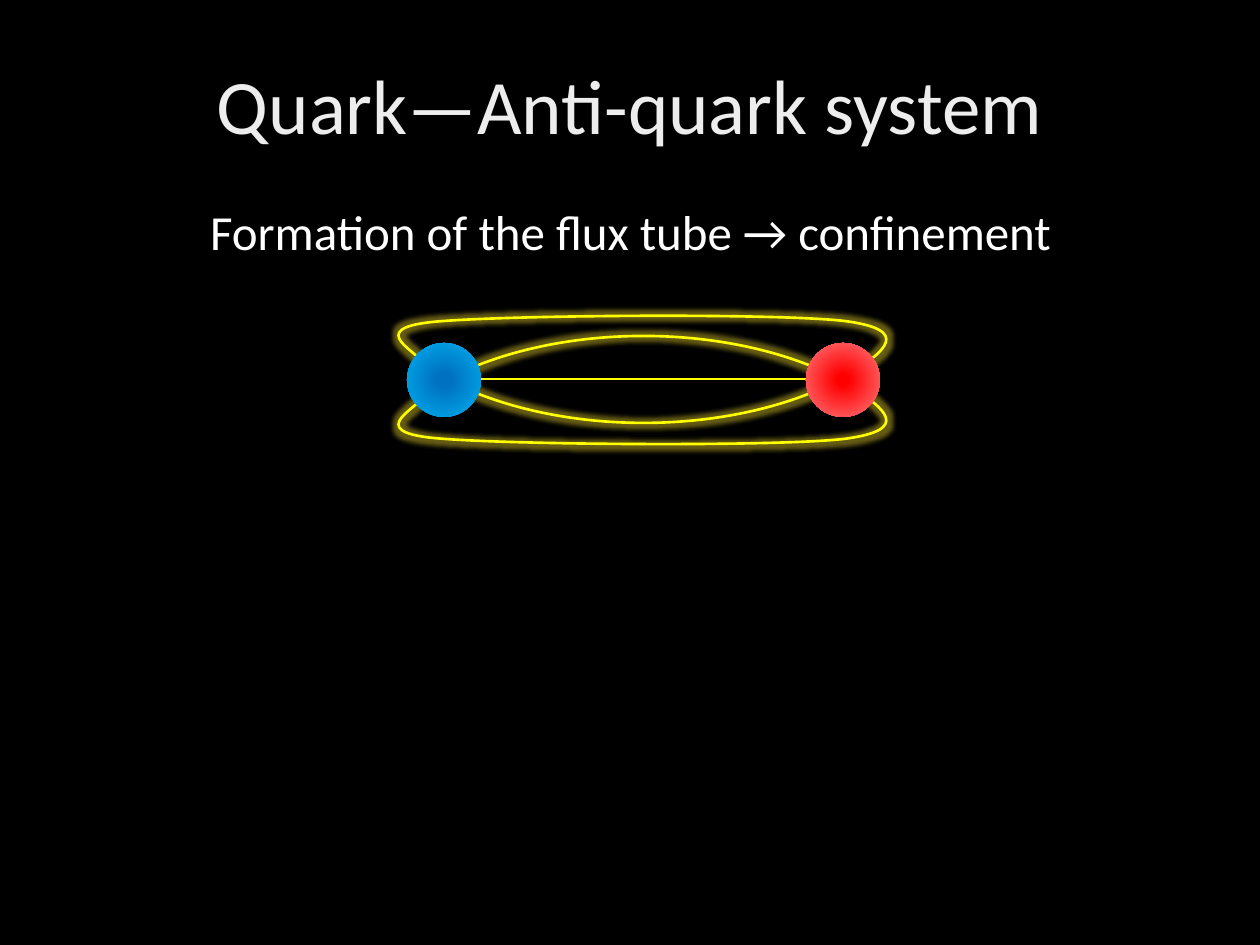
import pptx
import pptx.dml.color
import pptx.enum.shapes
import pptx.enum.text
import pptx.oxml
import pptx.oxml.ns
import pptx.util
from lxml import etree

EMU_PER_PX = 914400 / 126
COLORS = {
    "background": "000000", "text": "FFFFFF", "silver": "BFBFBF", "pearl": "EDEDED",
    "flux": "FFFF00", "glow": "FFE632",
    "red": "FF0000", "pink": "FF7C80", "blue": "0070C0", "sky": "00B0F0",
}
CENTER_SHADE = '<a:path path="circle"><a:fillToRect l="50000" t="50000" r="50000" b="50000"/></a:path>'
TITLE_SHADE = '<a:lin ang="4800000" scaled="0"/>'


def px(value):
    return pptx.util.Emu(round(value * EMU_PER_PX))


def rgb(name):
    return pptx.dml.color.RGBColor.from_string(COLORS[name])


def xml(tag, content, attributes=""):
    namespace = pptx.oxml.ns.nsdecls("a")
    return pptx.oxml.parse_xml(f"<a:{tag} {namespace} {attributes}>{content}</a:{tag}>")


class SlideBuilder:
    font = "Calibri"
    line_width = 1.5
    glow_radius = 63500

    def __init__(self, slide):
        self.slide = slide
        slide.background.fill.solid()
        slide.background.fill.fore_color.rgb = rgb("background")

    def text(self, box, content, size, wrap):
        frame = self.slide.shapes.add_textbox(*map(px, box)).text_frame
        frame.word_wrap = wrap
        frame.vertical_anchor = pptx.enum.text.MSO_ANCHOR.MIDDLE
        if not wrap:
            frame.auto_size = pptx.enum.text.MSO_AUTO_SIZE.SHAPE_TO_FIT_TEXT
        frame.text = content
        paragraph = frame.paragraphs[0]
        paragraph.alignment = pptx.enum.text.PP_ALIGN.CENTER
        run = paragraph.runs[0]
        run.font.name = self.font
        run.font.size = pptx.util.Pt(size)
        run.font.color.rgb = rgb("text")
        return paragraph

    def gradient(self, fill, owner, stops, shade):
        fill.gradient()
        listing = "".join(
            f'<a:gs pos="{position * 1000}"><a:srgbClr val="{COLORS[name]}"/></a:gs>'
            for position, name in stops)
        current = owner.find(pptx.oxml.ns.qn("a:gradFill"))
        owner.replace(current, xml("gradFill", f"<a:gsLst>{listing}</a:gsLst>{shade}"))

    def flux_style(self, shape):
        shape.line.color.rgb = rgb("flux")
        shape.line.width = pptx.util.Pt(self.line_width)

    def glow(self, shape):
        shape.shadow.inherit = False
        shape.fill.background()
        self.flux_style(shape)
        effects = shape._element.spPr.find(pptx.oxml.ns.qn("a:effectLst"))
        halo = etree.SubElement(effects, pptx.oxml.ns.qn("a:glow"), rad=str(self.glow_radius))
        color = etree.SubElement(halo, pptx.oxml.ns.qn("a:srgbClr"), val=COLORS["glow"])
        etree.SubElement(color, pptx.oxml.ns.qn("a:alpha"), val="40000")

    def straight(self, start, end):
        line = self.slide.shapes.add_connector(
            pptx.enum.shapes.MSO_CONNECTOR.STRAIGHT, *map(px, start + end))
        self.flux_style(line)
        line._element.spPr.append(xml("effectLst", ""))

    def arc(self, box, flipped):
        arc = self.slide.shapes.add_shape(pptx.enum.shapes.MSO_SHAPE.ARC, *map(px, box))
        arc.adjustments[0] = 126.955
        arc.adjustments[1] = 196.399
        if flipped:
            arc._element.spPr.xfrm.set("flipV", "1")
        self.glow(arc)

    def curve(self, box, points):
        left, top, width, height = box
        builder = self.slide.shapes.build_freeform(px(left), px(top))
        builder.add_line_segments([(px(left + width), px(top + height))], close=False)
        curve = builder.convert_to_shape()
        nodes = [f'<a:pt x="{px(x - left)}" y="{px(y - top)}"/>' for x, y in points]
        content = f"<a:moveTo>{nodes[0]}</a:moveTo>" + "".join(
            f"<a:cubicBezTo>{''.join(nodes[i:i + 3])}</a:cubicBezTo>"
            for i in range(1, len(nodes), 3))
        outlines = curve._element.spPr.find(".//" + pptx.oxml.ns.qn("a:pathLst"))
        outlines.replace(outlines[0], xml("path", content, f'w="{px(width)}" h="{px(height)}"'))
        self.glow(curve)

    def ball(self, box, inner, outer):
        ball = self.slide.shapes.add_shape(pptx.enum.shapes.MSO_SHAPE.OVAL, *map(px, box))
        ball.shadow.inherit = False
        ball.line.fill.background()
        self.gradient(ball.fill, ball._element.spPr, [(11, inner), (100, outer)], CENTER_SHADE)


def main():
    deck = pptx.Presentation()
    deck.slide_width, deck.slide_height = px(1260), px(945)
    builder = SlideBuilder(deck.slides.add_slide(deck.slide_layouts[6]))

    title = builder.text((87, 19, 1086, 182), "Quark—Anti-quark system", 44, True)
    title.line_spacing = 0.9
    title_run = title.runs[0]
    builder.gradient(title_run.font.fill, title_run._r.get_or_add_rPr(),
                     [(0, "silver"), (28, "pearl"), (100, "text")], TITLE_SHADE)
    builder.text((187, 195, 887, 72), "Formation of the flux tube → confinement", 28, False)

    builder.straight((444, 379), (844, 379))
    for top, flipped in ((336, False), (107, True)):
        builder.arc((358, top, 571, 316), flipped)

    mirror_sum = 760
    loop_left, loop_top, loop_width, loop_height = 398, 316, 488, 63
    upper_loop = [(445, 379), (435, 375), (425, 372), (422, 363),
                  (421, 353), (363, 329), (433, 322),
                  (504, 315), (774, 313), (844, 321),
                  (914, 330), (883, 352), (852, 373)]
    lower_loop = [(x, mirror_sum - y) for x, y in upper_loop]
    lower_top = mirror_sum - loop_top - loop_height
    for top, loop in ((loop_top, upper_loop), (lower_top, lower_loop)):
        builder.curve((loop_left, top, loop_width, loop_height), loop)

    for left, inner, outer in ((806, "red", "pink"), (407, "blue", "sky")):
        builder.ball((left, 343, 74, 74), inner, outer)

    deck.save("out.pptx")


if __name__ == "__main__":
    main()
